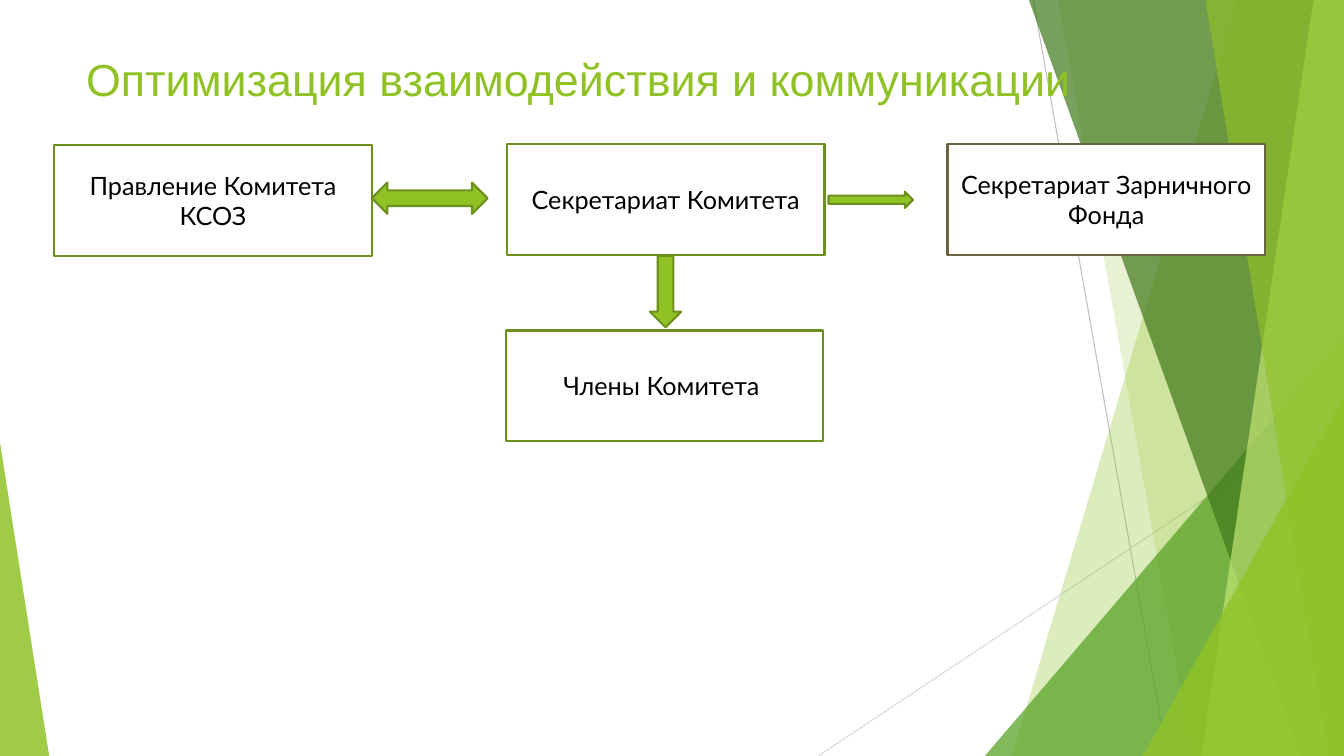
from dataclasses import dataclass

import pptx
import pptx.dml.color
import pptx.enum.shapes
import pptx.enum.text
import pptx.oxml
import pptx.oxml.ns
import pptx.util
from pptx.util import Cm


@dataclass(frozen=True)
class Theme:
    green: str = "90C226"
    leaf: str = "54A021"
    forest: str = "3F7819"
    lime: str = "C0E474"
    outline: str = "6B901C"
    brown: str = "6B633F"
    white: str = "FFFFFF"
    black: str = "000000"
    gray: str = "BFBFBF"
    light_gray: str = "D9D9D9"
    title_font: str = "Arial"
    body_font: str = "Lato"
    title_size: int = 32
    body_size: int = 18
    line_width: float = 1.5
    thin_line: float = 0.75


theme = Theme()
WIDTH, HEIGHT = 33.87, 19.05
Preset = pptx.enum.shapes.MSO_SHAPE


def paint(shape, fill, line=None, opacity=100):
    shape.shadow.inherit = False
    shape.fill.solid()
    shape.fill.fore_color.rgb = pptx.dml.color.RGBColor.from_string(fill)
    if opacity < 100:
        color = shape.element.spPr.find(".//" + pptx.oxml.ns.qn("a:srgbClr"))
        alpha = pptx.oxml.parse_xml(f'<a:alpha {pptx.oxml.ns.nsdecls("a")} val="{opacity * 1000}"/>')
        color.append(alpha)
    if line:
        shape.line.color.rgb = pptx.dml.color.RGBColor.from_string(line)
        shape.line.width = pptx.util.Pt(theme.line_width)
    else:
        shape.line.fill.background()


def format_text(paragraph, font, size, color, alignment):
    paragraph.alignment = alignment
    for run in paragraph.runs:
        run.font.name = font
        run.font.size = pptx.util.Pt(size)
        run.font.color.rgb = pptx.dml.color.RGBColor.from_string(color)


presentation = pptx.Presentation()
presentation.slide_width = Cm(WIDTH)
presentation.slide_height = Cm(HEIGHT)
slide = presentation.slides.add_slide(presentation.slide_layouts[5])

# Thin background lines
for x1, y1, x2, y2, color in [
    (26.04, 0, 29.41, HEIGHT, theme.gray),
    (WIDTH, 10.24, 20.62, HEIGHT, theme.light_gray),
]:
    line = slide.shapes.add_connector(
        pptx.enum.shapes.MSO_CONNECTOR.STRAIGHT, Cm(x1), Cm(y1), Cm(x2), Cm(y2))
    line.line.color.rgb = pptx.dml.color.RGBColor.from_string(color)
    line.line.width = pptx.util.Pt(theme.thin_line)
    line.element.spPr.append(pptx.oxml.parse_xml(f'<a:effectLst {pptx.oxml.ns.nsdecls("a")}/>'))

# Facets: panels (top x, bottom x) reach the right edge, triangles
# (left, top, width, apex) stand on the bottom edge
for geometry, color, opacity in [
    ((31.19, 25.5), theme.green, 30),
    ((26.67, 30.05), theme.green, 20),
    ((24.82, 8.46, 9.05, 1), theme.leaf, 72),
    ((25.93, 32.79), theme.forest, 70),
    ((33.1, 30.28), theme.lime, 70),
    ((30.38, 33.48), theme.green, 65),
    ((28.8, 9.98, 5.07, 1), theme.green, 80),
    ((0, 11.15, 1.24, 0), theme.green, 85),
]:
    if len(geometry) == 2:
        top_x, bottom_x = geometry
        builder = slide.shapes.build_freeform(Cm(top_x), 0)
        builder.add_line_segments([
            (Cm(WIDTH), 0), (Cm(WIDTH), Cm(HEIGHT)), (Cm(bottom_x), Cm(HEIGHT))])
        facet = builder.convert_to_shape()
    else:
        left, top, width, apex = geometry
        facet = slide.shapes.add_shape(
            Preset.ISOSCELES_TRIANGLE, Cm(left), Cm(top), Cm(width), Cm(HEIGHT - top))
        facet.adjustments[0] = apex
    paint(facet, color, opacity=opacity)

# Title, brought in front of the facets
title = slide.shapes.title
title.element.getparent().append(title.element)
title.left, title.top, title.width, title.height = Cm(1.7), Cm(1.17), Cm(30.48), Cm(2.49)
title_frame = title.text_frame
title_frame.text = "Оптимизация взаимодействия и коммуникации"
title_frame.auto_size = pptx.enum.text.MSO_AUTO_SIZE.NONE
title_frame.vertical_anchor = pptx.enum.text.MSO_ANCHOR.TOP
title_frame.margin_left = Cm(0.47)
format_text(title_frame.paragraphs[0], theme.title_font, theme.title_size, theme.green,
            pptx.enum.text.PP_ALIGN.LEFT)

# Organisation boxes
for text, left, top, outline in [
    ("Правление Комитета КСОЗ", 1.37, 3.66, theme.outline),
    ("Секретариат Комитета", 12.78, 3.63, theme.outline),
    ("Секретариат Зарничного Фонда", 23.88, 3.63, theme.brown),
    ("Члены Комитета ", 12.75, 8.33, theme.outline),
]:
    box = slide.shapes.add_shape(Preset.RECTANGLE, Cm(left), Cm(top), Cm(8), Cm(2.79))
    paint(box, theme.white, outline)
    box.text_frame.text = text
    box.text_frame.word_wrap = True
    box.text_frame.vertical_anchor = pptx.enum.text.MSO_ANCHOR.MIDDLE
    format_text(box.text_frame.paragraphs[0], theme.body_font, theme.body_size, theme.black,
                pptx.enum.text.PP_ALIGN.CENTER)

# Block arrows between the boxes
for preset, left, top, width, height in [
    (Preset.LEFT_RIGHT_ARROW, 9.37, 4.6, 2.92, 0.79),
    (Preset.RIGHT_ARROW, 20.88, 4.83, 2.13, 0.41),
    (Preset.DOWN_ARROW, 16.38, 6.45, 0.79, 1.8),
]:
    arrow = slide.shapes.add_shape(preset, Cm(left), Cm(top), Cm(width), Cm(height))
    paint(arrow, theme.green, theme.outline)

presentation.save("out.pptx")
